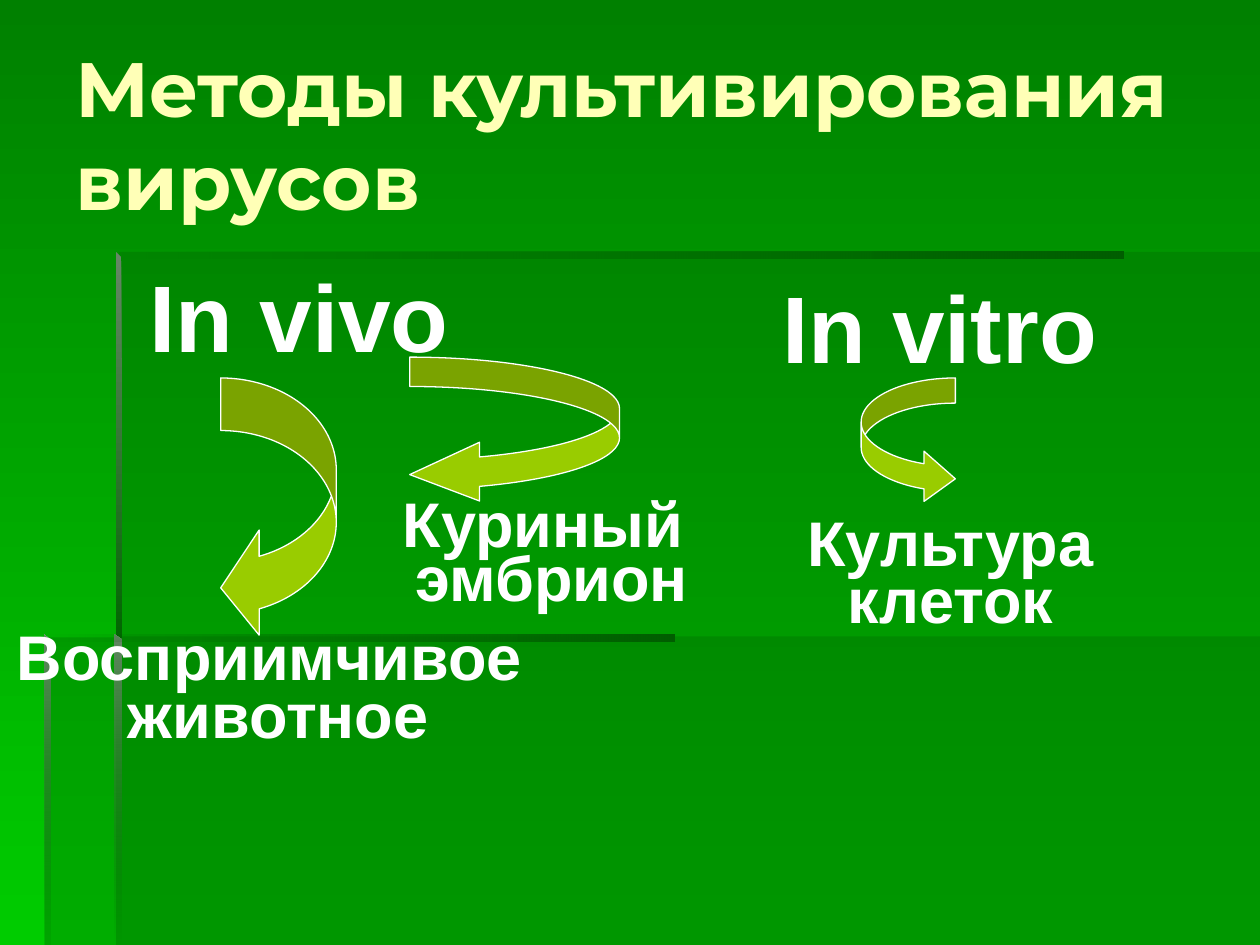
from lxml.etree import SubElement
from pptx import Presentation
from pptx.dml.color import RGBColor
from pptx.enum.shapes import MSO_SHAPE as Preset
from pptx.enum.text import MSO_ANCHOR as Anchor, MSO_AUTO_SIZE as AutoSize, PP_ALIGN as Align
from pptx.oxml.ns import qn
from pptx.util import Cm, Pt

COLORS = {
    "bg_top": "008000",
    "bg_bottom": "00CC00",
    "panel": "006600",
    "bar_end": "005E00",
    "bar_light": "668666",
    "arrow": "99CC00",
    "text": "FFFFFF",
    "title": "FFFFB7",
}
DOWN, ACROSS = 270, 0  # gradient directions


def rgb(name):
    return RGBColor.from_string(COLORS[name])


def set_alpha(color_parent, percent):
    color = color_parent.find(".//" + qn("a:srgbClr"))
    SubElement(color, qn("a:alpha")).set("val", str(percent * 1000))


def fill_gradient(fill, names, angle):
    fill.gradient()
    fill.gradient_angle = angle
    for stop, name, position in zip(fill.gradient_stops, names, (0, 1)):
        stop.color.rgb = rgb(name)
        stop.position = position


def style_text(para, font, size, color, align):
    para.alignment = align
    for span in para.runs:
        span.font.name = font
        span.font.size = Pt(size)
        span.font.bold = True
        span.font.color.rgb = rgb(color)


def rectangle(left, top, right, bottom):
    return [(left, top), (left, bottom), (right, bottom), (right, top)]


def add_outline(group, box, points):
    left, top = box[:2]
    spots = [(Cm(left + x), Cm(top + y)) for x, y in points]
    builder = group.shapes.build_freeform(*spots[0])
    builder.add_line_segments(spots[1:], close=True)
    outline = builder.convert_to_shape()
    outline.shadow.inherit = False
    outline.line.fill.background()
    return outline


def add_frame(page, box):
    """Translucent stepped panels with shaded bars along their edges."""
    width, height = box[2:]
    group = page.shapes.add_group_shape()

    # Panels
    panels = [
        rectangle(1.44, 7.75, width, height),
        [(1.49, 7.77), (0, 7.77), (0, height), (width, height), (width, 0), (1.49, 0)],
    ]
    for points in panels:
        panel = add_outline(group, box, points)
        panel.fill.solid()
        panel.fill.fore_color.rgb = rgb("panel")
        set_alpha(panel.fill._xPr.find(qn("a:solidFill")), 30)

    # Bars: points, gradient, direction, opacity of (stop, percent)
    fade_in, fade_out = ("panel", "bar_end"), ("bar_light", "panel")
    bars = [
        (rectangle(1.44, 0, 21.74, 0.13), fade_in, ACROSS, (0, 0)),
        ([(1.44, 0), (1.44, 7.87), (1.56, 7.87), (1.54, 0.1)], fade_out, DOWN, None),
        ([(1.41, height), (1.54, height), (1.54, 7.82), (1.41, 7.72)], fade_out, DOWN, (1, 0)),
        (rectangle(0, 7.72, 12.69, 7.85), fade_in, ACROSS, (0, 0)),
        ([(0, 7.72), (0, height), (0.12, height), (0.12, 7.85)], fade_out, DOWN, (1, 10)),
    ]
    for points, names, angle, opacity in bars:
        bar = add_outline(group, box, points)
        fill_gradient(bar.fill, names, angle)
        if opacity:
            index, percent = opacity
            stops = bar.fill._xPr.findall(".//" + qn("a:gs"))
            set_alpha(stops[index], percent)


def add_title(page, box, text):
    title = page.shapes.title
    title.left, title.top, title.width, title.height = map(Cm, box)
    frame = title.text_frame
    frame.text = text
    frame.word_wrap = True
    frame.auto_size = AutoSize.NONE
    frame.vertical_anchor = Anchor.MIDDLE
    style_text(frame.paragraphs[0], "Montserrat", 44, "title", Align.LEFT)


def add_label(page, box, lines, size=36, spacing=1.0):
    frame = page.shapes.add_textbox(*map(Cm, box)).text_frame
    frame.word_wrap = True
    frame.text = "\n".join(lines)
    for index, para in enumerate(frame.paragraphs):
        para.line_spacing = spacing
        if index:
            para.space_before = Pt(18)
        style_text(para, "Arial", size, "text", Align.CENTER)


def add_arrow(page, box, preset, adjustments):
    arrow = page.shapes.add_shape(preset, *map(Cm, box))
    for index, value in enumerate(adjustments):
        arrow.adjustments[index] = value
    arrow.shadow.inherit = False
    arrow.fill.solid()
    arrow.fill.fore_color.rgb = rgb("arrow")
    arrow.line.color.rgb = rgb("text")
    arrow.line.width = Pt(0.75)


def add_in_vivo(page, box):
    left, top = box
    add_arrow(page, (left + 4.45, top + 2.54, 2.33, 5.29),
              Preset.CURVED_LEFT_ARROW, (0.455, 0.909, 0.333))
    add_label(page, (left + 2.33, top, 7.41, 2.54), ["In vivo"], size=54)
    add_label(page, (left, top + 8.08, 11.22, 2.08),
              ["Восприимчивое ", "животное"], spacing=0.35)
    add_label(page, (left + 6.99, top + 5.46, 8.26, 1.93),
              ["Куриный ", "эмбрион"], spacing=0.3)
    add_arrow(page, (left + 8.26, top + 2.12, 4.23, 2.96),
              Preset.CURVED_LEFT_ARROW, (0.2, 0.4, 0.476))


def add_in_vitro(page, box):
    left, top = box
    add_label(page, (left + 0.21, top, 7.41, 2.54), ["In vitro"], size=54)
    add_label(page, (left, top + 5.1, 8.26, 2.54), ["Культура клеток"], spacing=0.75)
    add_arrow(page, (left + 2.33, top + 2.33, 1.9, 2.54),
              Preset.CURVED_RIGHT_ARROW, (0.267, 0.533, 0.333))


def main():
    deck = Presentation()
    deck.slide_width, deck.slide_height = Cm(25.4), Cm(19.05)
    page = deck.slides.add_slide(deck.slide_layouts[5])
    fill_gradient(page.background.fill, ("bg_top", "bg_bottom"), DOWN)

    add_frame(page, (0.9, 5.08, 24.5, 13.97))
    add_title(page, (1.27, 0.69, 23.29, 3.99), "Методы культивирования вирусов")
    add_in_vivo(page, (0, 5.08))
    add_in_vitro(page, (15.03, 5.29))
    deck.save("out.pptx")


if __name__ == "__main__":
    main()
